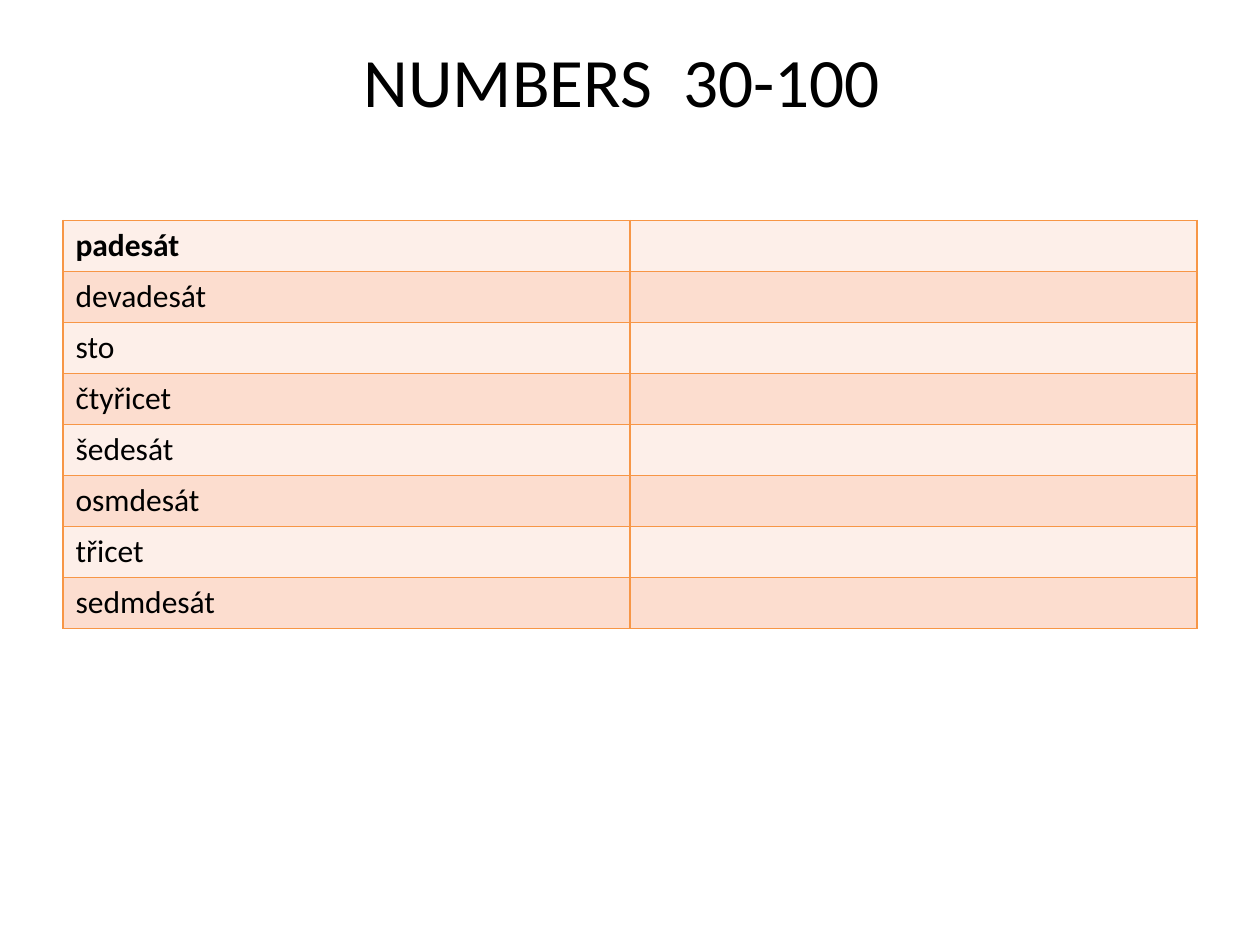
import pptx
import pptx.dml.color
import pptx.enum.text
import pptx.oxml
import pptx.util
from lxml import etree

Pt = pptx.util.Pt
BLACK = pptx.dml.color.RGBColor(0x00, 0x00, 0x00)
ORANGE = pptx.dml.color.RGBColor(0xF7, 0x96, 0x46)
LIGHT_PEACH = pptx.dml.color.RGBColor(0xFD, 0xEF, 0xE9)
PEACH = pptx.dml.color.RGBColor(0xFC, 0xDD, 0xCF)

FONT = "Calibri"
LEFT, WIDTH = 36, 648
ROW_HEIGHT = 29.16
NUMBER_WORDS = ["padesát", "devadesát", "sto", "čtyřicet",
                "šedesát", "osmdesát", "třicet", "sedmdesát"]


def write_text(text_frame, text, size=18, bold=False, color=BLACK,
               alignment=pptx.enum.text.PP_ALIGN.LEFT):
    paragraph = text_frame.paragraphs[0]
    paragraph.alignment = alignment
    run = paragraph.add_run()
    run.text = text
    run.font.name = FONT
    run.font.size = Pt(size)
    run.font.bold = bold
    run.font.color.rgb = color


def add_title(slide, text):
    shape = slide.shapes.add_textbox(Pt(LEFT), Pt(21.6), Pt(WIDTH), Pt(90))
    text_frame = shape.text_frame
    text_frame.word_wrap = True
    text_frame.margin_top = 0
    text_frame.vertical_anchor = pptx.enum.text.MSO_ANCHOR.TOP
    write_text(text_frame, text, size=39.6,
               alignment=pptx.enum.text.PP_ALIGN.CENTER)


def set_borders(cell, color, width):
    properties = cell._tc.get_or_add_tcPr()
    namespace = pptx.oxml.ns.nsdecls("a")
    for position, side in enumerate(("lnL", "lnR", "lnT", "lnB")):
        line = pptx.oxml.parse_xml(f'<a:{side} {namespace} w="{Pt(width)}"/>')
        fill = etree.SubElement(line, pptx.oxml.ns.qn("a:solidFill"))
        etree.SubElement(fill, pptx.oxml.ns.qn("a:srgbClr"), val=str(color))
        properties.insert(position, line)


def add_number_table(slide, words):
    """Add a table with the words on the left and empty answer cells."""
    frame = slide.shapes.add_table(len(words), 2, Pt(LEFT), Pt(126),
                                   Pt(WIDTH), Pt(ROW_HEIGHT * len(words)))
    table = frame.table
    for index, word in enumerate(words):
        row = table.rows[index]
        row.height = Pt(ROW_HEIGHT)
        for cell in row.cells:
            cell.fill.solid()
            cell.fill.fore_color.rgb = PEACH if index % 2 else LIGHT_PEACH
            set_borders(cell, ORANGE, 1)
        write_text(row.cells[0].text_frame, word, bold=index == 0)


def main():
    presentation = pptx.Presentation()
    presentation.slide_width = Pt(720)
    presentation.slide_height = Pt(540)
    slide = presentation.slides.add_slide(presentation.slide_layouts[6])
    add_title(slide, "NUMBERS  30-100 ")
    add_number_table(slide, NUMBER_WORDS)
    presentation.save("out.pptx")


if __name__ == "__main__":
    main()
